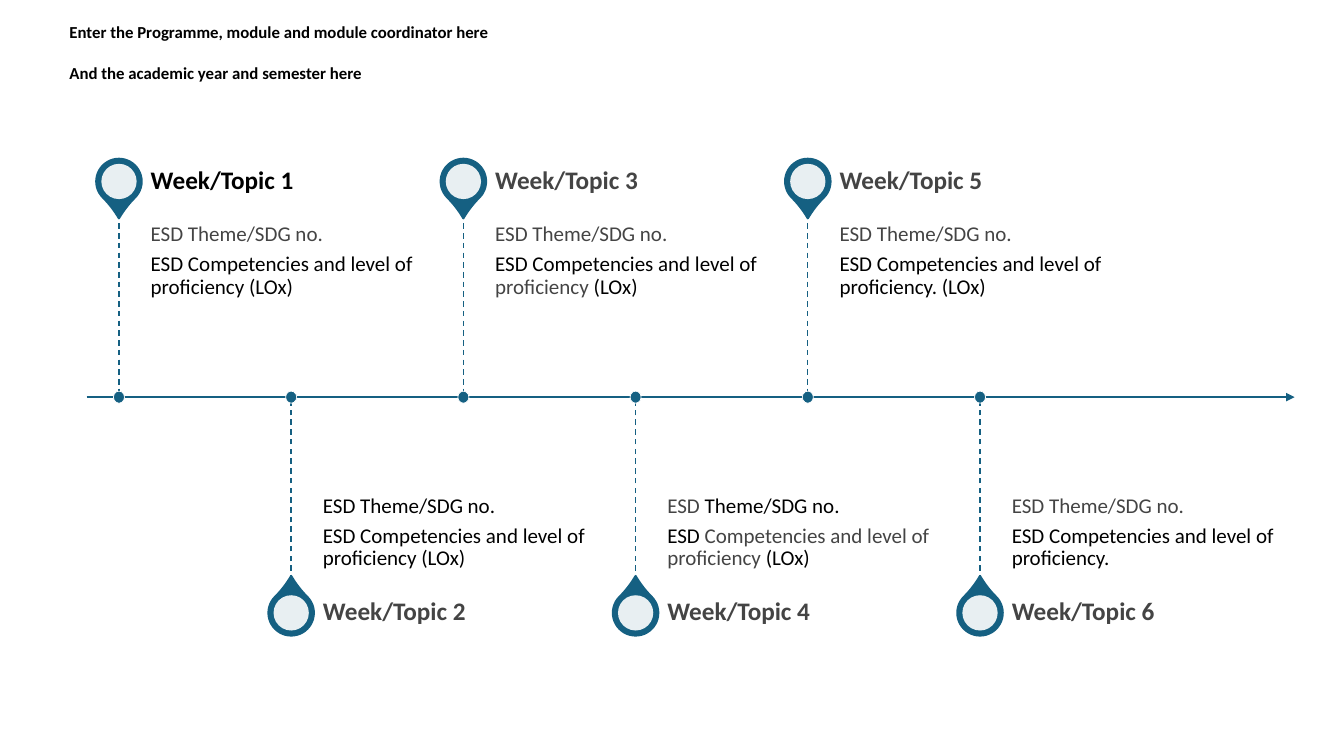
"""Build a timeline slide of six weekly topics with ESD themes and competencies."""
import pptx
import pptx.dml.color
import pptx.enum.dml
import pptx.enum.shapes
import pptx.enum.text
import pptx.oxml
import pptx.oxml.ns
import pptx.util

Inches, Pt = pptx.util.Inches, pptx.util.Pt
SHAPE = pptx.enum.shapes.MSO_SHAPE
ANCHOR = pptx.enum.text.MSO_ANCHOR

THEME = {
    "font": "Calibri", "teal": "156082", "white": "FFFFFF",
    "black": "000000", "grey": "444444",
    "header": 12, "title": 18, "body": 15,
}

HEADER = ["Enter the Programme, module and module coordinator here",
          "And the academic year and semester here"]
THEME_LINE = "ESD Theme/SDG no."
SKILLS = "ESD Competencies and level of proficiency"
TOPICS = [
    (("Week/Topic 1", "black"),
     [[(THEME_LINE, "grey")], [(SKILLS + " (LOx)", "black")]]),
    (("Week/Topic 2", "grey"),
     [[(THEME_LINE, "black")], [(SKILLS + " (LOx)", "black")]]),
    (("Week/Topic 3", "grey"),
     [[(THEME_LINE, "grey")],
      [("ESD Competencies and level of ", "black"), ("proficiency ", "grey"),
       ("(LOx)", "black")]]),
    (("Week/Topic 4", "grey"),
     [[("ESD ", "grey"), ("Theme/SDG no.", "black")],
      [("ESD ", "black"), ("Competencies and level of proficiency ", "grey"),
       ("(LOx)", "black")]]),
    (("Week/Topic 5", "grey"),
     [[(THEME_LINE, "grey")], [(SKILLS + ". (LOx)", "black")]]),
    (("Week/Topic 6", "grey"),
     [[(THEME_LINE, "grey")], [(SKILLS + ".", "black")]]),
]

AXIS_LEFT, AXIS_RIGHT, AXIS_Y = 0.86, 12.84, 3.94
FIRST_X, LAST_X = 1.18, 9.72
STEM, TITLE_H, TEXT_W, TEXT_DX = 1.82, 0.64, 2.8, 0.315
PIN, HOLE, DOT_W, DOT_H = 0.45, 0.35, 0.11, 0.12


def rgb(name):
    return pptx.dml.color.RGBColor.from_string(THEME[name])


def add_xml(parent, xml):
    ns = pptx.oxml.ns.nsdecls("a")
    parent.append(pptx.oxml.parse_xml(xml.replace("/>", f" {ns}/>")))


def add_line(slide, x1, y1, x2, y2, width):
    line = slide.shapes.add_connector(
        pptx.enum.shapes.MSO_CONNECTOR.STRAIGHT,
        Inches(x1), Inches(y1), Inches(x2), Inches(y2))
    line.line.color.rgb = rgb("teal")
    line.line.width = Pt(width)
    add_xml(line._element.spPr, "<a:effectLst/>")
    return line


def add_mark(slide, kind, x, y, w, h, fill, outline=None, width=0):
    sp = slide.shapes.add_shape(kind, Inches(x - w / 2), Inches(y - h / 2),
                                Inches(w), Inches(h))
    sp.shadow.inherit = False
    sp.fill.solid()
    sp.fill.fore_color.rgb = rgb(fill)
    if outline:
        sp.line.color.rgb = rgb(outline)
        sp.line.width = Pt(width)
    else:
        sp.line.fill.background()
    return sp


def add_text(slide, box, paragraphs, size, frame, spacing, bold=False):
    tf = slide.shapes.add_textbox(*map(Inches, box)).text_frame
    for name, value in {"word_wrap": True, **frame}.items():
        setattr(tf, name, value)
    for i, runs in enumerate(paragraphs):
        p = tf.paragraphs[0] if i == 0 else tf.add_paragraph()
        for name, value in spacing.items():
            if i or name != "space_before":
                setattr(p, name, value)
        for text, color in runs:
            r = p.add_run()
            r.text = text
            r.font.color.rgb = rgb(color)
            for name, value in {"name": THEME["font"], "size": Pt(THEME[size]),
                                "bold": bold}.items():
                setattr(r.font, name, value)


def margins(left, top, right, bottom):
    return {"margin_left": Inches(left), "margin_top": Inches(top),
            "margin_right": Inches(right), "margin_bottom": Inches(bottom)}


def add_topic(slide, x, above, title, body):
    side = -1 if above else 1
    tip_y = AXIS_Y + side * STEM
    pin_y = tip_y + side * TITLE_H / 2
    pin = add_mark(slide, SHAPE.TEAR, x, pin_y, PIN, PIN, "teal", "teal", 1.5)
    pin.adjustments[0] = 1.15
    pin.rotation = 135 if above else 315
    hole = add_mark(slide, SHAPE.OVAL, x, pin_y, HOLE, HOLE, "white")
    color = hole._element.spPr.find(".//" + pptx.oxml.ns.qn("a:srgbClr"))
    add_xml(color, '<a:alpha val="90000"/>')

    if above:
        frame = {"vertical_anchor": ANCHOR.TOP, **margins(0, 0.1, 0.1, 0.16)}
    else:
        frame = {"vertical_anchor": ANCHOR.BOTTOM, **margins(0, 0.16, 0, 0.1)}
    left = x + TEXT_DX
    add_text(slide, (left, min(tip_y, AXIS_Y), TEXT_W, STEM), body, "body", frame,
             {"line_spacing": 0.9, "space_after": Pt(5.25)})
    add_text(slide, (left, pin_y - TITLE_H / 2, TEXT_W, TITLE_H), [[title]], "title",
             {"vertical_anchor": ANCHOR.MIDDLE, **margins(0, 0, 0.12, 0)},
             {"line_spacing": 0.9}, bold=True)

    stem = add_line(slide, x, tip_y, x, AXIS_Y, 1)
    stem.line.dash_style = pptx.enum.dml.MSO_LINE.DASH
    add_mark(slide, SHAPE.OVAL, x, AXIS_Y, DOT_W, DOT_H, "teal", "white", 0.5)


def main():
    prs = pptx.Presentation()
    prs.slide_width, prs.slide_height = Inches(13.33), Inches(7.5)
    slide = prs.slides.add_slide(prs.slide_layouts[6])

    axis = add_line(slide, AXIS_LEFT, AXIS_Y, AXIS_RIGHT, AXIS_Y, 1.5)
    add_xml(axis.line._get_or_add_ln(), '<a:tailEnd type="triangle"/>')
    step = (LAST_X - FIRST_X) / (len(TOPICS) - 1)
    for i, (title, body) in enumerate(TOPICS):
        add_topic(slide, FIRST_X + i * step, i % 2 == 0, title, body)

    add_text(slide, (0.59, 0.17, 7.91, 0.71), [[(line, "black")] for line in HEADER],
             "header", {"auto_size": pptx.enum.text.MSO_AUTO_SIZE.SHAPE_TO_FIT_TEXT},
             {"space_before": Pt(14.65)}, bold=True)
    prs.save("out.pptx")


if __name__ == "__main__":
    main()
